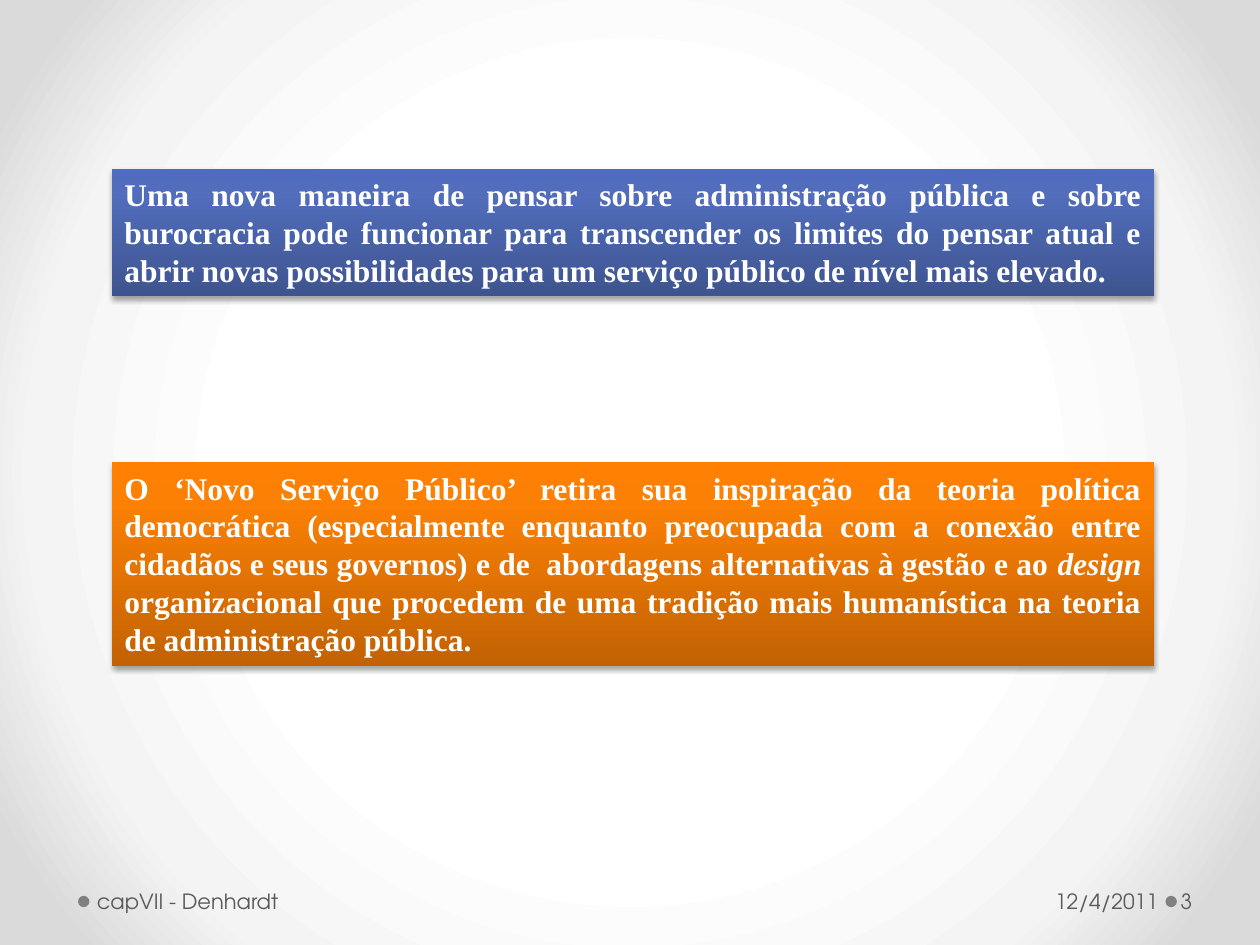
"""Build a slide with two gradient statement boxes and a dotted footer."""
from dataclasses import dataclass

from lxml import etree
from pptx import Presentation
from pptx import util as u
from pptx.dml.color import RGBColor
from pptx.enum import shapes, text
from pptx.oxml import ns

WHITE = RGBColor(0xFF, 0xFF, 0xFF)
BLACK = RGBColor(0x00, 0x00, 0x00)
PALE = RGBColor(0xF4, 0xF4, 0xF4)
SILVER = RGBColor(0xDA, 0xDA, 0xDA)
DOT_GREY = RGBColor(0x80, 0x80, 0x80)
FOOTER_GREY = RGBColor(0x59, 0x59, 0x59)
BLUES = (RGBColor(0x3E, 0x54, 0x90), RGBColor(0x51, 0x6D, 0xBB), RGBColor(0x4F, 0x6C, 0xBE))
ORANGES = (RGBColor(0xC2, 0x62, 0x03), RGBColor(0xFB, 0x80, 0x04), RGBColor(0xFF, 0x80, 0x02))

BODY_FONT = "Times New Roman"
FOOTER_FONT = "TeX Gyre Adventor"
BOX_LEFT, BOX_WIDTH = 64, 595.4
FOOTER_TOP, FOOTER_HEIGHT = 500.4, 28.8
DOT_TOP, DOT_SIZE = 511.9, 6.5
DOT_LEFTS = (666, 44.6)
UPWARD = '<a:lin ang="16200000" scaled="0"/>'
CIRCULAR = ('<a:path path="circle"><a:fillToRect l="50000" t="50000" '
            'r="50000" b="50000"/></a:path>')


@dataclass(frozen=True)
class Statement:
    top: float
    height: float
    colors: tuple[RGBColor, ...]
    runs: tuple[tuple[str, bool], ...]


@dataclass(frozen=True)
class FooterItem:
    content: str
    left: float
    width: float
    inset_left: float
    inset_right: float
    align: text.PP_ALIGN


STATEMENTS = (
    Statement(96.5, 72.7, BLUES, (
        ("Uma nova maneira de pensar sobre administração pública e sobre "
         "burocracia pode funcionar para transcender os limites do pensar atual e "
         "abrir novas possibilidades para um serviço público de nível mais elevado. ", False),
    )),
    Statement(264.2, 116.6, ORANGES, (
        ("O ‘Novo Serviço Público’ retira sua inspiração da teoria política "
         "democrática (especialmente enquanto preocupada com a conexão entre "
         "cidadãos e seus governos) e de  abordagens alternativas à gestão e ao ", False),
        ("design", True),
        (" organizacional que procedem de uma tradição mais humanística na teoria "
         "de administração pública.", False),
    )),
)

FOOTER = (
    FooterItem("12/4/2011", 501.1, 164.2, 7.2, 3.6, text.PP_ALIGN.RIGHT),
    FooterItem("capVII - Denhardt", 51.8, 223.9, 3.6, 7.2, text.PP_ALIGN.LEFT),
    FooterItem("3", 672.5, 43.9, 2.2, 3.6, text.PP_ALIGN.LEFT),
)


def set_gradient(parent, stops, direction: str) -> None:
    """Replace the solid fill inside a properties element with a gradient."""
    gs = "".join(f'<a:gs pos="{pos * 1000}"><a:srgbClr val="{color}"/></a:gs>'
                 for pos, color in stops)
    grad = etree.fromstring(f'<a:gradFill {ns.nsdecls("a")} rotWithShape="1">'
                            f'<a:gsLst>{gs}</a:gsLst>{direction}</a:gradFill>')
    parent.replace(parent.find(ns.qn("a:solidFill")), grad)


def add_shadow(sp) -> None:
    """Give a shape a soft shadow falling straight down."""
    sp.shadow.inherit = False
    effects = sp._element.spPr.find(ns.qn("a:effectLst"))
    effects.append(etree.fromstring(
        f'<a:outerShdw {ns.nsdecls("a")} blurRad="{u.Pt(3.1)}" dist="{u.Pt(1.8)}" '
        f'dir="5400000" rotWithShape="0"><a:srgbClr val="{BLACK}">'
        '<a:alpha val="35000"/></a:srgbClr></a:outerShdw>'))


def style_run(r, font: str, size: float, color: RGBColor) -> None:
    """Set the typeface, size and colour of a run."""
    r.font.name, r.font.size = font, u.Pt(size)
    r.font.color.rgb = color


def add_statement(s, item: Statement) -> None:
    """Draw a shadowed gradient box with a justified statement."""
    sp = s.shapes.add_shape(shapes.MSO_SHAPE.RECTANGLE, u.Pt(BOX_LEFT), u.Pt(item.top),
                            u.Pt(BOX_WIDTH), u.Pt(item.height))
    sp.line.fill.background()
    sp.fill.solid()
    set_gradient(sp._element.spPr, zip((0, 80, 100), item.colors), UPWARD)
    add_shadow(sp)
    tf = sp.text_frame
    tf.word_wrap = True
    tf.auto_size = text.MSO_AUTO_SIZE.SHAPE_TO_FIT_TEXT
    tf.vertical_anchor = text.MSO_ANCHOR.TOP
    p = tf.paragraphs[0]
    p.alignment, p.space_before = text.PP_ALIGN.JUSTIFY, u.Pt(12)
    for content, italic in item.runs:
        r = p.add_run()
        r.text = content
        style_run(r, BODY_FONT, 18, WHITE)
        r.font.bold, r.font.italic = True, italic


def add_dot(s, left: float) -> None:
    """Draw a small grey footer dot."""
    sp = s.shapes.add_shape(shapes.MSO_SHAPE.OVAL, u.Pt(left), u.Pt(DOT_TOP),
                            u.Pt(DOT_SIZE), u.Pt(DOT_SIZE))
    sp.shadow.inherit = False
    sp.fill.solid()
    sp.fill.fore_color.rgb = DOT_GREY
    sp.line.fill.background()


def add_footer_item(s, item: FooterItem) -> None:
    """Draw one line of footer text."""
    sp = s.shapes.add_textbox(u.Pt(item.left), u.Pt(FOOTER_TOP),
                              u.Pt(item.width), u.Pt(FOOTER_HEIGHT))
    tf = sp.text_frame
    tf.word_wrap = True
    tf.vertical_anchor = text.MSO_ANCHOR.MIDDLE
    tf.margin_left, tf.margin_right = u.Pt(item.inset_left), u.Pt(item.inset_right)
    tf.text = item.content
    p = tf.paragraphs[0]
    p.alignment = item.align
    style_run(p.runs[0], FOOTER_FONT, 12, FOOTER_GREY)


def main() -> None:
    """Assemble and save the slide."""
    prs = Presentation()
    prs.slide_width, prs.slide_height = u.Pt(720), u.Pt(540)
    s = prs.slides.add_slide(prs.slide_layouts[6])
    s.background.fill.solid()
    set_gradient(s._element.find(f'.//{ns.qn("p:bgPr")}'),
                 ((50, WHITE), (76, PALE), (92, SILVER)), CIRCULAR)
    for left in DOT_LEFTS:
        add_dot(s, left)
    for item in FOOTER:
        add_footer_item(s, item)
    for statement in STATEMENTS:
        add_statement(s, statement)
    prs.save("out.pptx")


if __name__ == "__main__":
    main()
